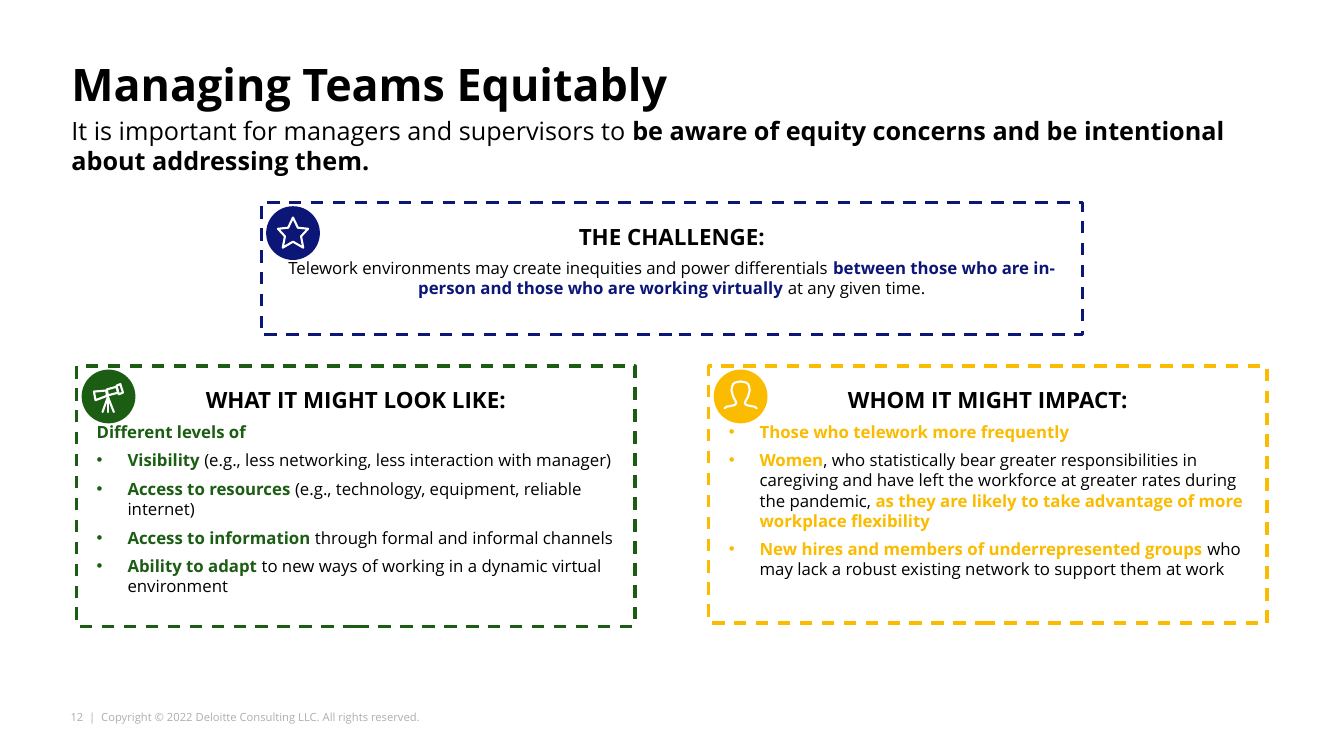
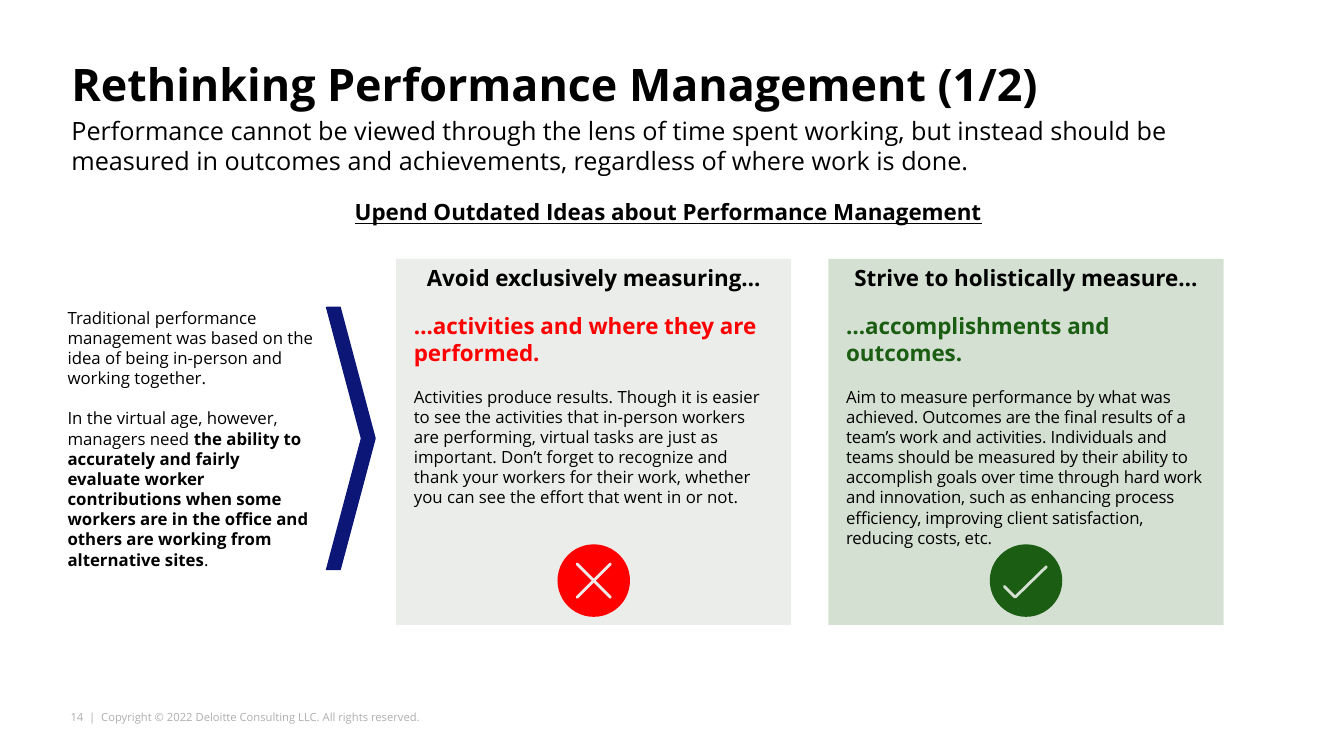
from dataclasses import dataclass

from lxml.etree import SubElement
from pptx import Presentation
from pptx.dml.color import RGBColor
from pptx.enum.dml import MSO_LINE
from pptx.enum.shapes import MSO_SHAPE
from pptx.enum.text import MSO_ANCHOR, MSO_AUTO_SIZE, PP_ALIGN
from pptx.oxml.ns import qn
from pptx.util import Pt


@dataclass(frozen=True)
class Theme:
    font: str = "Open Sans"
    black: str = "000000"
    white: str = "FFFFFF"
    navy: str = "0B1677"
    green: str = "1B5D13"
    amber: str = "FABB01"
    red: str = "FF0000"
    grey: str = "9AA094"
    footer_grey: str = "AEAEAE"
    grey_tint: str = "ECEDEB"
    green_tint: str = "D4E0D2"
    panel_opacity: int = 19
    title_size: int = 32
    lead_size: int = 18
    heading_size: int = 16
    body_size: int = 12
    footer_size: int = 8
    item_gap: float = 6
    paragraph_gap: float = 14.4


THEME = Theme()

# The slide is a grid of 96 columns by 54 rows of square cells
COLUMNS, ROWS, CELL = 96, 54, 10
TITLE_AREA = (5.1, 4.46, 76.6, 4.68)
LEAD_AREA = (5.1, 8.2, 82.4, 4.4)
FOOTER_AREA = (5.04, 50.76, 40, 1)
CARD_INSET = 1.44
BOX_INSETS = (0.72, 0.36)
BULLET_INDENT = 2.2


@dataclass(frozen=True)
class Run:
    text: str
    color: str = THEME.black
    bold: bool = False
    size: int = THEME.body_size
    underline: bool = False
    tracking: float = 0


@dataclass(frozen=True)
class Para:
    runs: tuple
    align: PP_ALIGN = PP_ALIGN.LEFT
    before: float = 0
    after: float = 0
    bullet: bool = False
    spacing: float = 1.0


def mirrored(left_half, top):
    """Outline that is symmetric about the middle of a 100-unit icon."""
    return [*left_half, top, *((100 - x, y) for x, y in reversed(left_half))]


# Icon strokes: (points in a 100-unit square, closed)
STAR = [(mirrored([(50, 66), (31, 77), (35, 56), (22, 42), (41, 40)], (50, 21)), True)]
TELESCOPE = [
    ([(23, 41), (26, 57), (47, 49), (46, 39)], True),
    ([(47, 37), (49, 48), (68, 43), (65, 32)], True),
    ([(65, 30), (72, 27), (77, 43), (69, 46)], True),
    ([(39, 79), (49, 51), (60, 79)], False),
    ([(49, 51), (49, 79)], False),
]
PERSON = [(mirrored([(20, 72), (24, 69), (31, 68), (39, 66), (42, 63), (41, 59), (37, 52),
                     (35, 46), (33, 39), (34, 32), (36, 27), (40, 24)], (50, 22)), False)]
CROSS = [([(27, 27), (73, 73)], False), ([(73, 27), (27, 73)], False)]
CHECK = [([(20, 58), (35, 73), (78, 31)], False)]


def cells(count):
    return Pt(count * CELL)


def place(shape, area):
    shape.left, shape.top, shape.width, shape.height = map(cells, area)


def rgb(color):
    return RGBColor.from_string(color)


# Text

def bold(text, color=THEME.black):
    return Run(text, color, True)


def heading(text, color=THEME.black, underline=False):
    return Run(text, color, True, THEME.heading_size, underline)


def set_marker(paragraph, bulleted):
    properties = paragraph._p.get_or_add_pPr()
    indent = cells(BULLET_INDENT) if bulleted else 0
    properties.set("marL", str(indent))
    properties.set("indent", str(-indent))
    if bulleted:
        SubElement(properties, qn("a:buFont")).set("typeface", "Arial")
        SubElement(properties, qn("a:buChar")).set("char", "•")
    else:
        SubElement(properties, qn("a:buNone"))


def write(frame, paras, insets=(0, 0)):
    frame.word_wrap = True
    frame.auto_size = MSO_AUTO_SIZE.NONE
    frame.vertical_anchor = MSO_ANCHOR.TOP
    frame.margin_left = frame.margin_right = cells(insets[0])
    frame.margin_top = frame.margin_bottom = cells(insets[1])
    for index, para in enumerate(paras):
        paragraph = frame.add_paragraph() if index else frame.paragraphs[0]
        set_marker(paragraph, para.bullet)
        paragraph.alignment = para.align
        paragraph.line_spacing = para.spacing
        paragraph.space_before = Pt(para.before)
        paragraph.space_after = Pt(para.after)
        for piece in para.runs:
            run = paragraph.add_run()
            run.text = piece.text
            run.font.name = THEME.font
            run.font.size = Pt(piece.size)
            run.font.bold = piece.bold
            run.font.underline = piece.underline
            run.font.color.rgb = rgb(piece.color)
            if piece.tracking:
                run.font._element.set("spc", str(round(piece.tracking * 100)))


def add_text(slide, area, paras, insets=BOX_INSETS):
    write(slide.shapes.add_textbox(*map(cells, area)).text_frame, paras, insets)


# Shapes

def add_block(slide, preset, area, fill=None, outline=None, width=1):
    block = slide.shapes.add_shape(preset, *map(cells, area))
    block.shadow.inherit = False
    if fill:
        block.fill.solid()
        block.fill.fore_color.rgb = rgb(fill)
    else:
        block.fill.background()
    if outline:
        block.line.color.rgb = rgb(outline)
        block.line.width = Pt(width)
    else:
        block.line.fill.background()
    return block


def add_icon(slide, left, top, size, color, strokes, stroke_color, stroke_width):
    add_block(slide, MSO_SHAPE.OVAL, (left, top, size, size), color)
    (start, *_), _ = strokes[0]
    builder = slide.shapes.build_freeform(*start, scale=cells(size) / 100)
    for index, (points, closed) in enumerate(strokes):
        if index:
            builder.move_to(*points[0])
        builder.add_line_segments(points[1:], close=closed)
    drawing = builder.convert_to_shape(cells(left), cells(top))
    drawing.shadow.inherit = False
    drawing.fill.background()
    drawing.line.color.rgb = rgb(stroke_color)
    drawing.line.width = Pt(stroke_width)
    drawing.element.spPr.find(qn("a:ln")).set("cap", "rnd")


def add_card(slide, area, color, strokes, title, paras):
    """Dashed frame with a heading, text and a round icon in its corner."""
    card = add_block(slide, MSO_SHAPE.RECTANGLE, area, outline=color, width=2.25)
    card.line.dash_style = MSO_LINE.DASH
    top_line = Para((heading(title),), PP_ALIGN.CENTER, after=THEME.item_gap)
    write(card.text_frame, [top_line, *paras], (CARD_INSET, CARD_INSET))
    add_icon(slide, area[0] + 0.36, area[1] + 0.26, 3.84, color, strokes, THEME.white, 1.5)


def add_panel(slide, left, fill, tint, accent, strokes, title, claim, detail, text_width):
    """Tinted panel with a heading, a claim, its detail and a round icon."""
    top, width, height, icon_size = 18.5, 28.22, 26.14, 5.18
    panel = add_block(slide, MSO_SHAPE.RECTANGLE, (left, top, width, height), fill)
    color_node = panel.element.spPr.find(qn("a:solidFill"))[0]
    SubElement(color_node, qn("a:alpha")).set("val", str(THEME.panel_opacity * 1000))
    add_icon(slide, left + (width - icon_size) / 2, 38.88, icon_size, accent, strokes, tint, 2)
    add_text(slide, (left, top, width, 2.66), [Para((heading(title),), PP_ALIGN.CENTER)])
    add_text(slide, (left + 0.54, 21.96, text_width, 17.7), [
        Para((heading(claim, accent),)),
        Para((detail,), before=THEME.paragraph_gap),
    ])


def items(*run_groups):
    return [Para(runs, after=THEME.item_gap, bullet=True) for runs in run_groups]


# Shared slide frame

def start_slide(deck, number, title, lead):
    slide = deck.slides.add_slide(deck.slide_layouts[1])
    title_run = Run(title, bold=True, size=THEME.title_size)
    write(slide.shapes.title.text_frame, [Para((title_run,), spacing=0.9)])
    lead_runs = tuple(Run(text, bold=strong, size=THEME.lead_size) for text, strong in lead)
    write(slide.placeholders[1].text_frame, [Para(lead_runs)])
    notice = f"{number}  |  Copyright © 2022 Deloitte Consulting LLC. All rights reserved."
    footer = Run(notice, THEME.footer_grey, size=THEME.footer_size)
    add_text(slide, FOOTER_AREA, [Para((footer,))], (0, 0))
    return slide


def build_equity_slide(deck):
    slide = start_slide(deck, 12, "Managing Teams Equitably", [
        ("It is important for managers and supervisors to ", False),
        ("be aware of equity concerns and be intentional about addressing them.", True),
    ])
    challenge = Para((
        Run("Telework environments may create inequities and power differentials "),
        bold("between those who are in-person and those who are working virtually ", THEME.navy),
        Run("at any given time."),
    ), PP_ALIGN.CENTER, after=THEME.item_gap)
    add_card(slide, (18.65, 14.47, 58.68, 9.43), THEME.navy, STAR, "THE CHALLENGE:", [challenge])

    # Two cards side by side
    green, amber = THEME.green, THEME.amber
    add_card(slide, (5.47, 26.14, 39.89, 18.58), green, TELESCOPE, "WHAT IT MIGHT LOOK LIKE:", [
        Para((bold("Different levels of", green),), after=THEME.item_gap),
        *items(
            (bold("Visibility ", green),
             Run("(e.g., less networking, less interaction with manager)")),
            (bold("Access to resources ", green),
             Run("(e.g., technology, equipment, reliable internet)")),
            (bold("Access to information ", green),
             Run("through formal and informal channels")),
            (bold("Ability to adapt ", green),
             Run("to new ways of working in a dynamic virtual environment")),
        ),
    ])
    add_card(slide, (50.62, 26.14, 39.89, 18.36), amber, PERSON, "WHOM IT MIGHT IMPACT:", items(
        (bold("Those who telework more frequently", amber),),
        (bold("Women", amber),
         Run(", who statistically bear greater responsibilities in caregiving and have left "
             "the workforce at greater rates during the pandemic, "),
         bold("as they are likely to take advantage of more workplace flexibility", amber)),
        (bold("New hires and members of underrepresented groups ", amber),
         Run("who may lack a robust existing network to support them at work")),
    ))


def build_performance_slide(deck):
    slide = start_slide(deck, 14, "Rethinking Performance Management (1/2)", [
        ("Performance cannot be viewed through the lens of time spent working, but instead "
         "should be measured in outcomes and achievements, regardless of where work is done.",
         False),
    ])
    banner = heading("Upend Outdated Ideas about Performance Management", underline=True)
    add_text(slide, (24.62, 13.82, 46.8, 2.66), [Para((banner,))])

    # Background and arrow
    add_text(slide, (4.11, 21.6, 19.22, 19.66), [
        Para((Run("Traditional performance management was based on the idea of being "
                  "in-person and working together."),)),
        Para((Run("In the virtual age, however, managers need "),
              bold("the ability to accurately and fairly evaluate worker contributions when "
                   "some workers are in the office and others are working from alternative "
                   "sites"),
              Run(".")), before=THEME.paragraph_gap),
    ])
    arrow = add_block(slide, MSO_SHAPE.CHEVRON, (23.33, 21.96, 3.46, 18.72),
                      THEME.navy, THEME.navy)
    arrow.adjustments[0] = 0.72

    # Measures to avoid and to strive for
    add_panel(slide, 28.3, THEME.grey, THEME.grey_tint, THEME.red, CROSS,
              "Avoid exclusively measuring…", "…activities and where they are performed.",
              Run("Activities produce results. Though it is easier to see the activities that "
                  "in-person workers are performing, virtual tasks are just as important. "
                  "Don’t forget to recognize and thank your workers for their work, whether "
                  "you can see the effort that went in or not."), 27)
    add_panel(slide, 59.18, THEME.green, THEME.green_tint, THEME.green, CHECK,
              "Strive to holistically measure…", "…accomplishments and outcomes.",
              Run("Aim to measure performance by what was achieved. Outcomes are the final "
                  "results of a team’s work and activities. Individuals and teams should be "
                  "measured by their ability to accomplish goals over time through hard work "
                  "and innovation, such as enhancing process efficiency, improving client "
                  "satisfaction, reducing costs, etc.", tracking=-0.1), 27.65)


def main():
    deck = Presentation()
    deck.slide_width, deck.slide_height = cells(COLUMNS), cells(ROWS)
    layout = deck.slide_layouts[1]
    place(layout.placeholders[0], TITLE_AREA)
    place(layout.placeholders[1], LEAD_AREA)
    build_equity_slide(deck)
    build_performance_slide(deck)
    deck.save("out.pptx")


if __name__ == "__main__":
    main()
